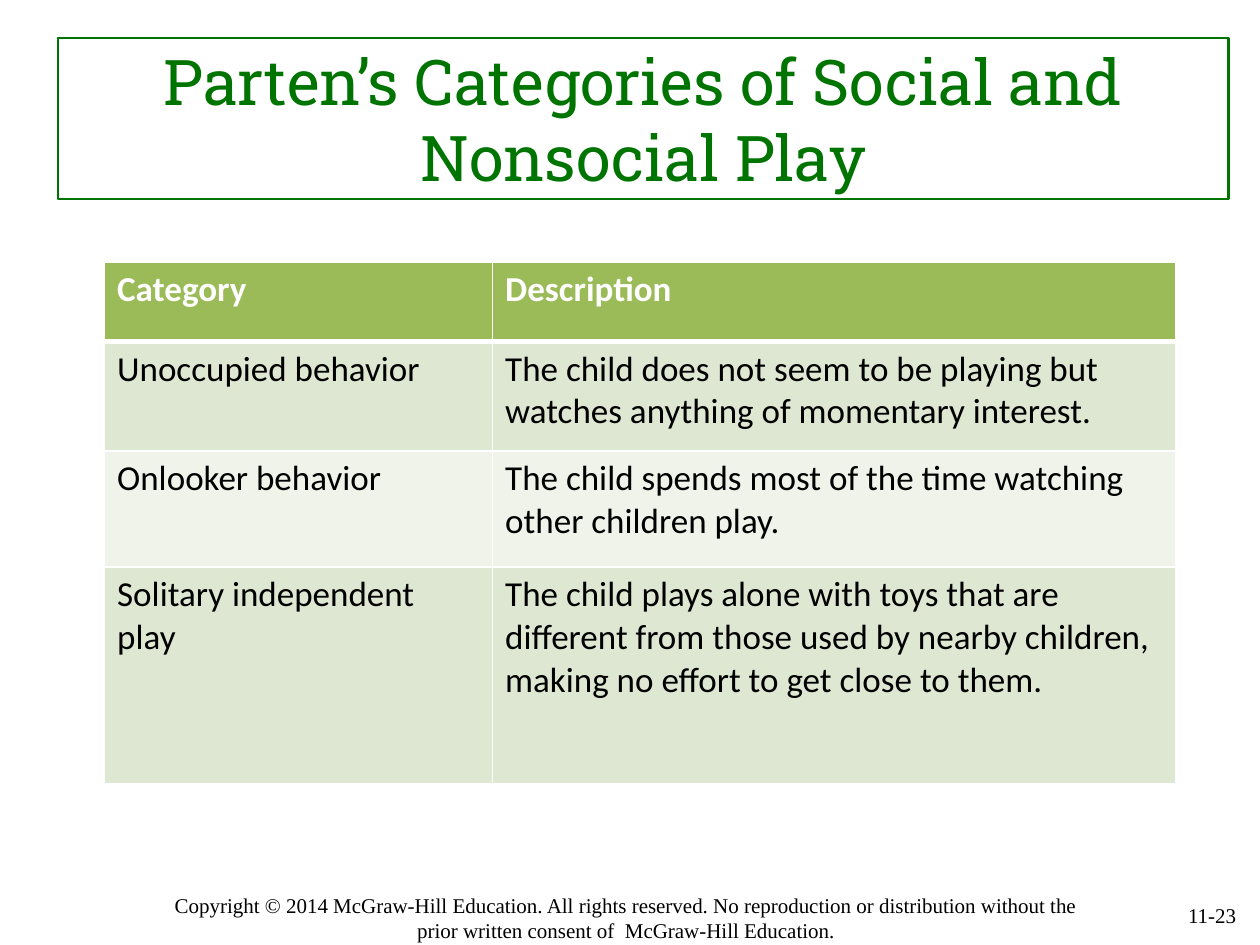
from lxml import etree
from pptx import Presentation
from pptx.dml.color import RGBColor
from pptx.enum import shapes, text
from pptx.oxml.ns import qn
from pptx.util import Inches, Pt

GREEN, BLACK, WHITE = "007400", "000000", "FFFFFF"
HEADER_FILL, BAND_FILLS = "9BBB59", ("DEE7D1", "EFF3EA")
COLUMN_WIDTHS = (3.08, 5.42)
ROW_HEIGHTS = (0.63, 0.87, 0.92, 1.72)
PLAY_CATEGORIES = (
    ("Category", "Description"),
    ("Unoccupied behavior",
     "The child does not seem to be playing but watches anything of momentary interest."),
    ("Onlooker behavior",
     "The child spends most of the time watching other children play."),
    ("Solitary independent play",
     "The child plays alone with toys that are different from those used by "
     "nearby children, making no effort to get close to them."),
)
COPYRIGHT = ("Copyright © 2014 McGraw-Hill Education. All rights reserved. "
             "No reproduction or distribution without the prior written consent "
             "of  McGraw-Hill Education.")


def rgb(color):
    return RGBColor.from_string(color)


def write(tf, words, size, font, color, align=text.PP_ALIGN.LEFT, bold=False):
    p = tf.paragraphs[0]
    p.alignment = align
    r = p.add_run()
    r.text = words
    r.font.size = Pt(size)
    r.font.name = font
    r.font.bold = bold
    r.font.color.rgb = rgb(color)


def add_title(s, words):
    sp = s.shapes.add_shape(shapes.MSO_SHAPE.RECTANGLE, Inches(0.46), Inches(0.3),
                            Inches(9.29), Inches(1.28))
    sp.shadow.inherit = False
    sp.fill.background()
    sp.line.color.rgb = rgb(GREEN)
    sp.line.width = Pt(1.25)
    tf = sp.text_frame
    tf.word_wrap = True
    tf.vertical_anchor = text.MSO_ANCHOR.MIDDLE
    write(tf, words, 36, "Roboto Slab", GREEN, text.PP_ALIGN.CENTER)


def add_footer(s, words, left, top, width, align):
    sp = s.shapes.add_textbox(Inches(left), Inches(top), Inches(width), Inches(0.4))
    tf = sp.text_frame
    tf.word_wrap = True
    write(tf, words, 12, "Times New Roman", BLACK, align)
    return tf


def set_borders(cell, bottom):
    """Draw white cell borders, 1 pt wide except for the given bottom width."""
    tc_pr = cell._tc.get_or_add_tcPr()
    for side, width in (("L", 1), ("R", 1), ("T", 1), ("B", bottom)):
        ln = etree.SubElement(tc_pr, qn(f"a:ln{side}"), w=str(Pt(width)))
        fill = etree.SubElement(ln, qn("a:solidFill"))
        etree.SubElement(fill, qn("a:srgbClr"), val=WHITE)


def add_play_table(s):
    frame = s.shapes.add_table(len(ROW_HEIGHTS), len(COLUMN_WIDTHS),
                               Inches(0.83), Inches(2.08),
                               Inches(sum(COLUMN_WIDTHS)), Inches(sum(ROW_HEIGHTS)))
    table = frame.table
    for column, width in zip(table.columns, COLUMN_WIDTHS):
        column.width = Inches(width)
    for i, (row, height) in enumerate(zip(table.rows, ROW_HEIGHTS)):
        row.height = Inches(height)
        header = i == 0
        for cell, words in zip(row.cells, PLAY_CATEGORIES[i]):
            set_borders(cell, bottom=3 if header else 1)
            cell.fill.solid()
            cell.fill.fore_color.rgb = rgb(HEADER_FILL if header else BAND_FILLS[(i - 1) % 2])
            write(cell.text_frame, words, 20, "Calibri",
                  WHITE if header else BLACK, bold=header)


def main():
    prs = Presentation()
    prs.slide_width, prs.slide_height = Inches(10), Inches(7.5)
    s = prs.slides.add_slide(prs.slide_layouts[6])
    tf = add_footer(s, COPYRIGHT, 1.27, 7.08, 7.4, text.PP_ALIGN.CENTER)
    tf.margin_left = tf.margin_top = tf.margin_right = tf.margin_bottom = 0
    tf = add_footer(s, "11-23", 7.58, 7.06, 2.33, text.PP_ALIGN.RIGHT)
    tf.vertical_anchor = text.MSO_ANCHOR.MIDDLE
    add_title(s, "Parten’s Categories of Social and Nonsocial Play")
    add_play_table(s)
    prs.save("out.pptx")


if __name__ == "__main__":
    main()
